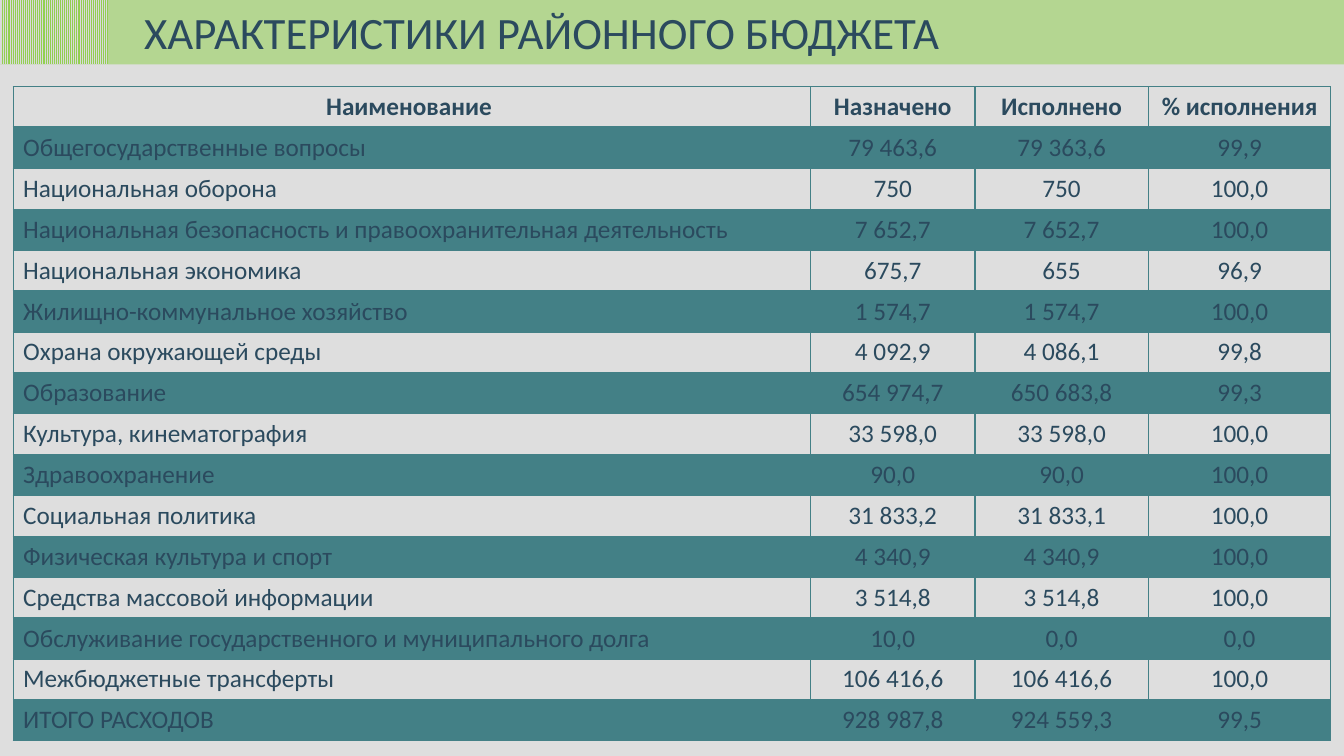
from dataclasses import dataclass

from lxml import etree
from pptx import Presentation
from pptx import util as u
from pptx.dml.color import RGBColor
from pptx.enum import dml, shapes, text
from pptx.oxml import ns

COLORS = {
    "background": "DEDEDE",
    "green": "92D050",
    "stripe": "D9D9D9",
    "ink": "2B4A5E",
    "teal": "438086",
}
FONT = "Calibri"
BAND_HEIGHT = 0.64
TABLE_HEIGHT = 6.49
COLUMN_WIDTHS = (7.91, 1.63, 1.72, 1.81)
HEADER = ("Наименование ", "Назначено", "Исполнено", "% исполнения")


@dataclass(frozen=True)
class BudgetLine:
    name: str
    planned: str
    executed: str
    percent: str

    def values(self) -> tuple[str, ...]:
        return self.name, self.planned, self.executed, self.percent


BUDGET = (
    BudgetLine("Общегосударственные вопросы", "79 463,6", "79 363,6", "99,9"),
    BudgetLine("Национальная оборона", "750", "750", "100,0"),
    BudgetLine("Национальная безопасность и правоохранительная деятельность",
               "7 652,7", "7 652,7", "100,0"),
    BudgetLine("Национальная экономика", "675,7", "655", "96,9"),
    BudgetLine("Жилищно-коммунальное хозяйство", "1 574,7", "1 574,7", "100,0"),
    BudgetLine("Охрана окружающей среды", "4 092,9", "4 086,1", "99,8"),
    BudgetLine("Образование", "654 974,7", "650 683,8", "99,3"),
    BudgetLine("Культура, кинематография", "33 598,0", "33 598,0", "100,0"),
    BudgetLine("Здравоохранение", "90,0", "90,0", "100,0"),
    BudgetLine("Социальная политика", "31 833,2", "31 833,1", "100,0"),
    BudgetLine("Физическая культура и спорт", "4 340,9", "4 340,9", "100,0"),
    BudgetLine("Средства массовой информации", "3 514,8", "3 514,8", "100,0"),
    BudgetLine("Обслуживание государственного и муниципального долга",
               "10,0", "0,0", "0,0"),
    BudgetLine("Межбюджетные трансферты", "106 416,6", "106 416,6", "100,0"),
    BudgetLine("ИТОГО РАСХОДОВ", "928 987,8", "924 559,3", "99,5"),
)


def rgb(name: str) -> RGBColor:
    return RGBColor.from_string(COLORS[name])


def fill_solid(fill, color: str, opacity: int = 100) -> None:
    fill.solid()
    fill.fore_color.rgb = rgb(color)
    if opacity < 100:
        clr = fill._xPr.find(".//" + ns.qn("a:srgbClr"))
        etree.SubElement(clr, ns.qn("a:alpha"), val=str(opacity * 1000))


def add_run(p, content: str, size: int, bold: bool = False) -> None:
    r = p.add_run()
    r.text = content
    r.font.name = FONT
    r.font.size = u.Pt(size)
    r.font.bold = bold
    r.font.color.rgb = rgb("ink")


def add_band(slide, width: float):
    s = slide.shapes.add_shape(shapes.MSO_SHAPE.RECTANGLE, 0, 0,
                               u.Inches(width), u.Inches(BAND_HEIGHT))
    s.shadow.inherit = False
    s.line.fill.background()
    return s


def add_title(slide, content: str) -> None:
    title = slide.shapes.title
    title.left, title.top = u.Inches(1.33), u.Inches(0)
    title.width, title.height = u.Inches(8.17), u.Inches(BAND_HEIGHT)
    tf = title.text_frame
    tf.word_wrap = False
    tf.auto_size = text.MSO_AUTO_SIZE.SHAPE_TO_FIT_TEXT
    tf.vertical_anchor = text.MSO_ANCHOR.TOP
    p = tf.paragraphs[0]
    p.alignment = text.PP_ALIGN.LEFT
    p.line_spacing = 1.0
    p.space_before = u.Pt(0)
    add_run(p, content, 32)
    slide.shapes._spTree.append(title._element)


def set_borders(cell, top: int, bottom: int) -> None:
    tc_pr = cell._tc.get_or_add_tcPr()
    for side, width in {"L": 1, "R": 1, "T": top, "B": bottom}.items():
        ln = etree.SubElement(tc_pr, ns.qn(f"a:ln{side}"), w=str(u.Pt(width)))
        solid = etree.SubElement(ln, ns.qn("a:solidFill"))
        etree.SubElement(solid, ns.qn("a:srgbClr"), val=COLORS["teal"])


def add_budget_table(slide) -> None:
    rows = [HEADER] + [line.values() for line in BUDGET]
    table = slide.shapes.add_table(
        len(rows), len(HEADER), u.Inches(0.13), u.Inches(0.86),
        u.Inches(sum(COLUMN_WIDTHS)), u.Inches(TABLE_HEIGHT)).table
    table.first_row = table.horz_banding = False
    for column, width in zip(table.columns, COLUMN_WIDTHS):
        column.width = u.Inches(width)
    for i, values in enumerate(rows):
        table.rows[i].height = u.Inches(TABLE_HEIGHT / len(rows))
        for j, value in enumerate(values):
            cell = table.cell(i, j)
            set_borders(cell, top=2 if i == 1 else 1, bottom=2 if i == 0 else 1)
            if i % 2:
                fill_solid(cell.fill, "teal", 20)
            else:
                cell.fill.background()
            p = cell.text_frame.paragraphs[0]
            centred = i == 0 or j > 0
            p.alignment = text.PP_ALIGN.CENTER if centred else text.PP_ALIGN.LEFT
            add_run(p, value, 18, bold=i == 0)


def main() -> None:
    prs = Presentation()
    prs.slide_width, prs.slide_height = u.Inches(13.33), u.Inches(7.5)
    slide = prs.slides.add_slide(prs.slide_layouts[5])
    fill_solid(slide.background.fill, "background")
    fill_solid(add_band(slide, 13.33).fill, "green", 54)
    add_title(slide, "ХАРАКТЕРИСТИКИ РАЙОННОГО БЮДЖЕТА")
    stripes = add_band(slide, 1.07).fill
    stripes.patterned()
    stripes.pattern = dml.MSO_PATTERN.LIGHT_VERTICAL
    stripes.fore_color.rgb = rgb("green")
    stripes.back_color.rgb = rgb("stripe")
    add_budget_table(slide)
    prs.save("out.pptx")


if __name__ == "__main__":
    main()
